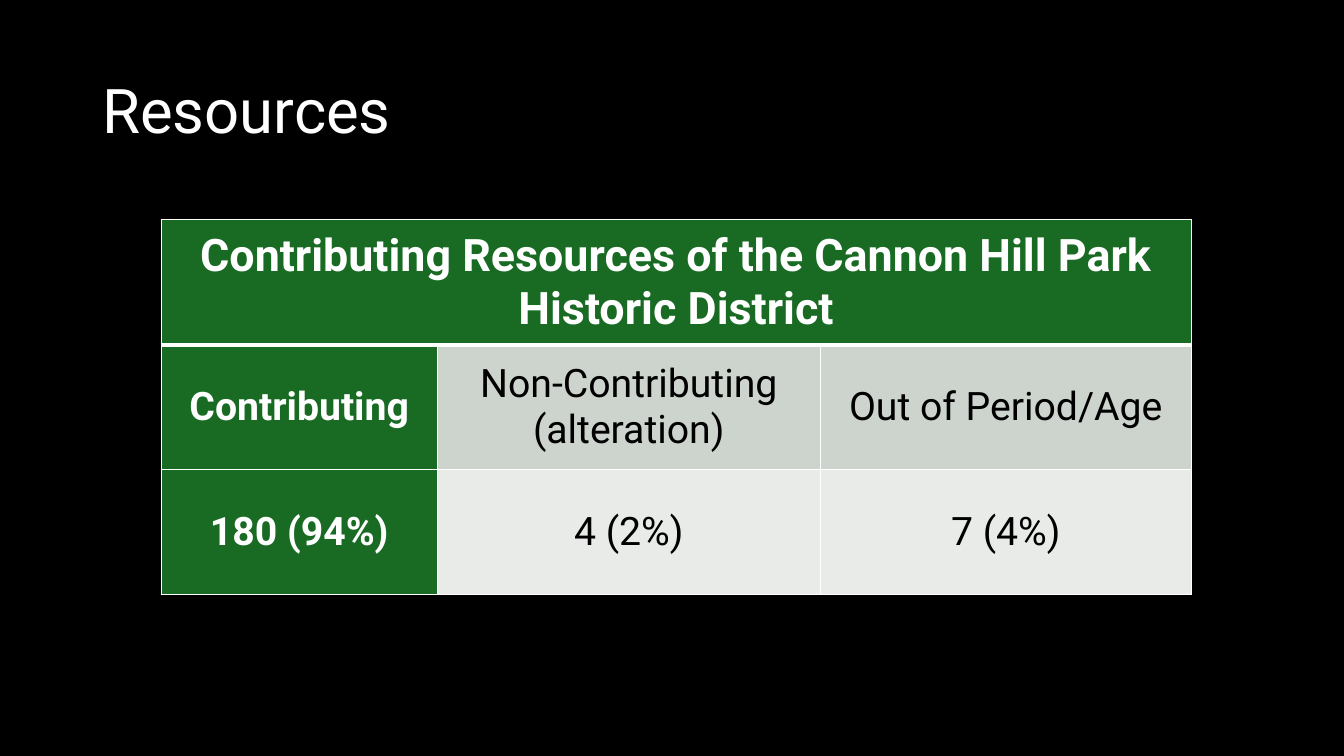
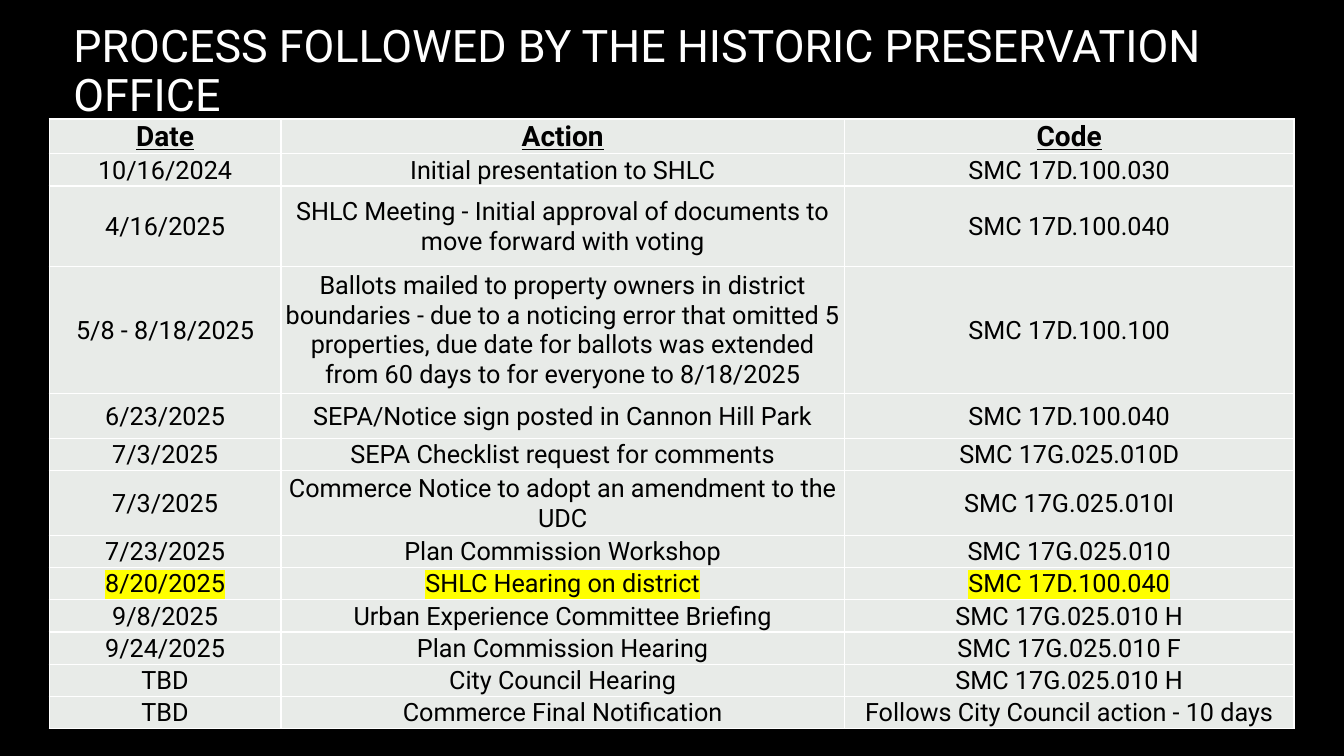
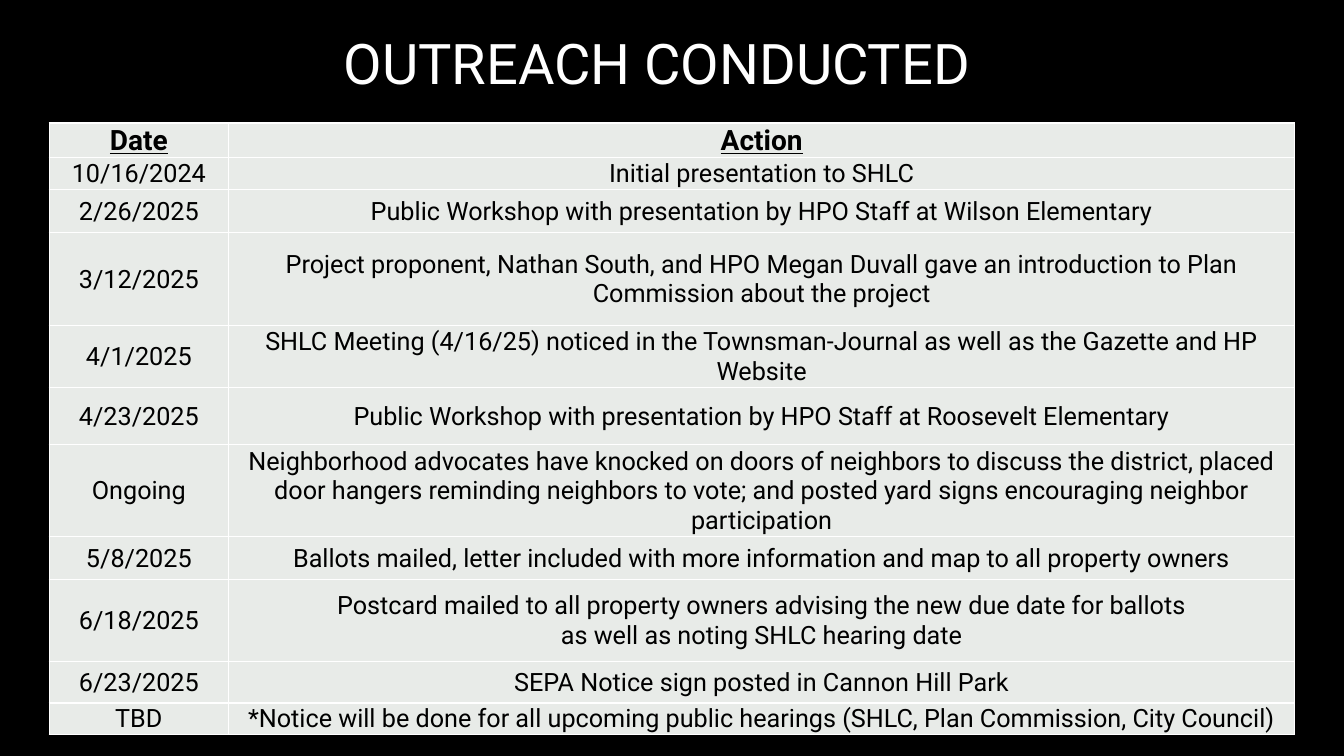
from dataclasses import dataclass, replace

from lxml.etree import SubElement
from pptx import Presentation
from pptx.dml.color import RGBColor
from pptx.enum.text import MSO_ANCHOR, PP_ALIGN
from pptx.oxml.ns import qn
from pptx.slide import Slide
from pptx.table import _Cell
from pptx.text.text import TextFrame
from pptx.util import Cm, Pt


# Shared look
@dataclass(frozen=True)
class Theme:
    font: str = "Roboto"
    background: str = "000000"
    light: str = "FFFFFF"
    dark: str = "000000"
    green: str = "196B24"
    gray: str = "CCD4CD"
    pale: str = "E8EBE8"
    marker: str = "FFFF00"
    banner_size: int = 32
    figure_size: int = 28
    heading_size: int = 20
    entry_size: int = 18
    rule: float = 1
    thick_rule: float = 3


THEME = Theme()


@dataclass(frozen=True)
class TextStyle:
    size: float
    color: str = THEME.dark
    bold: bool = False
    underline: bool = False
    highlight: str | None = None


@dataclass(frozen=True)
class CellStyle:
    fill: str
    text: TextStyle


@dataclass(frozen=True)
class TableRow:
    height: float
    texts: tuple[str, ...]
    styles: tuple[CellStyle, ...]
    top: float = THEME.rule
    bottom: float = THEME.rule


@dataclass(frozen=True)
class Title:
    text: str
    left: float
    top: float
    width: float
    height: float
    size: float
    align: PP_ALIGN = PP_ALIGN.LEFT


@dataclass(frozen=True)
class Grid:
    left: float
    top: float
    columns: tuple[float, ...]
    rows: tuple[TableRow, ...]
    side_inset: float
    top_inset: float
    banner: bool = False


@dataclass(frozen=True)
class Entry:
    height: float
    texts: tuple[str, ...]
    marked: bool = False


# Cell styles
BANNER = CellStyle(THEME.green, TextStyle(THEME.banner_size, THEME.light, bold=True))
KEY = CellStyle(THEME.green, TextStyle(THEME.figure_size, THEME.light, bold=True))
LABEL = CellStyle(THEME.gray, TextStyle(THEME.figure_size))
FIGURE = CellStyle(THEME.pale, TextStyle(THEME.figure_size))
HEADING = CellStyle(THEME.pale, TextStyle(THEME.heading_size, bold=True, underline=True))
ENTRY = CellStyle(THEME.pale, TextStyle(THEME.entry_size))
MARKED = replace(ENTRY, text=replace(ENTRY.text, highlight=THEME.marker))


# Drawing functions
def format_text(frame: TextFrame, style: TextStyle, align: PP_ALIGN, spacing: float) -> None:
    for para in frame.paragraphs:
        para.alignment = align
        para.line_spacing = spacing
        for span in para.runs:
            font = span.font
            font.name = THEME.font
            font.size = Pt(style.size)
            font.bold = style.bold
            font.underline = style.underline
            font.color.rgb = RGBColor.from_string(style.color)
            if style.highlight:
                properties = span._r.get_or_add_rPr()
                highlight = SubElement(properties, qn("a:highlight"))
                SubElement(highlight, qn("a:srgbClr"), val=style.highlight)
                properties.find(qn("a:solidFill")).addnext(highlight)


def draw_borders(cell: _Cell, top: float, bottom: float) -> None:
    properties = cell._tc.get_or_add_tcPr()
    widths = {"lnL": THEME.rule, "lnR": THEME.rule, "lnT": top, "lnB": bottom}
    for position, (side, width) in enumerate(widths.items()):
        line = SubElement(properties, qn(f"a:{side}"), w=str(Pt(width)))
        fill = SubElement(line, qn("a:solidFill"))
        SubElement(fill, qn("a:srgbClr"), val=THEME.light)
        properties.insert(position, line)


def draw_title(page: Slide, title: Title) -> None:
    box = page.shapes.add_textbox(
        Cm(title.left), Cm(title.top), Cm(title.width), Cm(title.height)
    )
    frame = box.text_frame
    frame.word_wrap = True
    frame.vertical_anchor = MSO_ANCHOR.MIDDLE
    frame.text = title.text
    format_text(frame, TextStyle(title.size, THEME.light), title.align, 0.9)


def draw_grid(page: Slide, grid: Grid) -> None:
    table = page.shapes.add_table(
        len(grid.rows), len(grid.columns), Cm(grid.left), Cm(grid.top),
        Cm(sum(grid.columns)), Cm(sum(row.height for row in grid.rows)),
    ).table
    table.first_row = False
    table.horz_banding = False
    for column, width in zip(table.columns, grid.columns):
        column.width = Cm(width)
    if grid.banner:
        table.cell(0, 0).merge(table.cell(0, len(grid.columns) - 1))

    for row_index, row in enumerate(grid.rows):
        table.rows[row_index].height = Cm(row.height)
        for column_index, (text, style) in enumerate(zip(row.texts, row.styles)):
            cell = table.cell(row_index, column_index)
            cell.margin_left = cell.margin_right = Cm(grid.side_inset)
            cell.margin_top, cell.margin_bottom = Cm(grid.top_inset), 0
            cell.vertical_anchor = MSO_ANCHOR.MIDDLE
            cell.fill.solid()
            cell.fill.fore_color.rgb = RGBColor.from_string(style.fill)
            draw_borders(cell, row.top, row.bottom)
            if text:
                cell.text_frame.text = text
                format_text(cell.text_frame, style.text, PP_ALIGN.CENTER, 1.0)


def schedule(top: float, columns: tuple[float, ...], entries: tuple[Entry, ...]) -> Grid:
    """Lay out a dated list whose first entry holds the headings."""
    rows = []
    for index, entry in enumerate(entries):
        style = HEADING if index == 0 else MARKED if entry.marked else ENTRY
        rows.append(TableRow(entry.height, entry.texts, (style,) * len(columns)))
    return Grid(1.24, top, columns, tuple(rows), side_inset=0.03, top_inset=0.03)


# Resources
RESOURCES = Grid(
    4.06, 5.54, (6.96, 9.65, 9.35),
    (
        TableRow(
            3.15,
            ("Contributing Resources of the Cannon Hill Park Historic District", "", ""),
            (BANNER,) * 3,
            bottom=THEME.thick_rule,
        ),
        TableRow(
            3.15,
            ("Contributing", "Non-Contributing (alteration)", "Out of Period/Age"),
            (KEY, LABEL, LABEL),
            top=THEME.thick_rule,
        ),
        TableRow(3.15, ("180 (94%)", "4 (2%)", "7 (4%)"), (KEY, FIGURE, FIGURE)),
    ),
    side_inset=0.18, top_inset=0, banner=True,
)

# Process steps
PROCESS = schedule(3.0, (5.84, 14.2, 11.33), (
    Entry(0.81, ("Date", "Action", "Code")),
    Entry(0.81, ("10/16/2024", "Initial presentation to SHLC", "SMC 17D.100.030")),
    Entry(2.03, (
        "4/16/2025",
        "SHLC Meeting - Initial approval of documents to move forward with voting",
        "SMC 17D.100.040",
    )),
    Entry(3.2, (
        "5/8 - 8/18/2025",
        "Ballots mailed to property owners in district boundaries - due to a noticing "
        "error that omitted 5 properties, due date for ballots was extended from 60 days "
        "to for everyone to 8/18/2025",
        "SMC 17D.100.100",
    )),
    Entry(1.14, ("6/23/2025", "SEPA/Notice sign posted in Cannon Hill Park", "SMC 17D.100.040")),
    Entry(0.81, ("7/3/2025", "SEPA Checklist request for comments", "SMC 17G.025.010D")),
    Entry(1.63, (
        "7/3/2025", "Commerce Notice to adopt an amendment to the UDC", "SMC 17G.025.010I",
    )),
    Entry(0.81, ("7/23/2025", "Plan Commission Workshop", "SMC 17G.025.010")),
    Entry(0.81, ("8/20/2025", "SHLC Hearing on district", "SMC 17D.100.040"), marked=True),
    Entry(0.81, ("9/8/2025", "Urban Experience Committee Briefing", "SMC 17G.025.010 H")),
    Entry(0.81, ("9/24/2025", "Plan Commission Hearing", "SMC 17G.025.010 F")),
    Entry(0.81, ("TBD", "City Council Hearing", "SMC 17G.025.010 H")),
    Entry(0.81, ("TBD", "Commerce Final Notification", "Follows City Council action - 10 days")),
))

# Outreach events
OUTREACH = schedule(3.1, (4.52, 26.87), (
    Entry(0.79, ("Date", "Action")),
    Entry(0.79, ("10/16/2024", "Initial presentation to SHLC")),
    Entry(1.09, (
        "2/26/2025", "Public Workshop with presentation by HPO Staff at Wilson Elementary",
    )),
    Entry(2.34, (
        "3/12/2025",
        "Project proponent, Nathan South, and HPO Megan Duvall gave an introduction to "
        "Plan Commission about the project",
    )),
    Entry(0.79, (
        "4/1/2025",
        "SHLC Meeting (4/16/25) noticed in the Townsman-Journal as well as the Gazette "
        "and HP Website",
    )),
    Entry(1.45, (
        "4/23/2025", "Public Workshop with presentation by HPO Staff at Roosevelt Elementary",
    )),
    Entry(2.13, (
        "Ongoing",
        "Neighborhood advocates have knocked on doors of neighbors to discuss the "
        "district, placed door hangers reminding neighbors to vote; and posted yard signs "
        "encouraging neighbor participation",
    )),
    Entry(1.07, (
        "5/8/2025",
        "Ballots mailed, letter included with more information and map to all property owners",
    )),
    Entry(2.08, (
        "6/18/2025",
        "Postcard mailed to all property owners advising the new due date for ballots\n"
        "as well as noting SHLC hearing date",
    )),
    Entry(1.04, ("6/23/2025", "SEPA Notice sign posted in Cannon Hill Park")),
    Entry(0.79, (
        "TBD",
        "*Notice will be done for all upcoming public hearings (SHLC, Plan Commission, "
        "City Council)",
    )),
))

PAGES = (
    (Title("Resources", 2.33, 1.02, 29.21, 3.68, 44), RESOURCES),
    (
        Title(
            "PROCESS FOLLOWED BY THE HISTORIC PRESERVATION OFFICE",
            1.6, 1.09, 30.63, 1.47, 32,
        ),
        PROCESS,
    ),
    (
        Title("OUTREACH CONDUCTED", 1.24, 0.94, 30.63, 1.45, 40, PP_ALIGN.CENTER),
        OUTREACH,
    ),
)


def main() -> None:
    deck = Presentation()
    deck.slide_width, deck.slide_height = Cm(33.87), Cm(19.05)
    for title, grid in PAGES:
        page = deck.slides.add_slide(deck.slide_layouts[6])
        page.background.fill.solid()
        page.background.fill.fore_color.rgb = RGBColor.from_string(THEME.background)
        draw_title(page, title)
        draw_grid(page, grid)
    deck.save("out.pptx")


if __name__ == "__main__":
    main()
